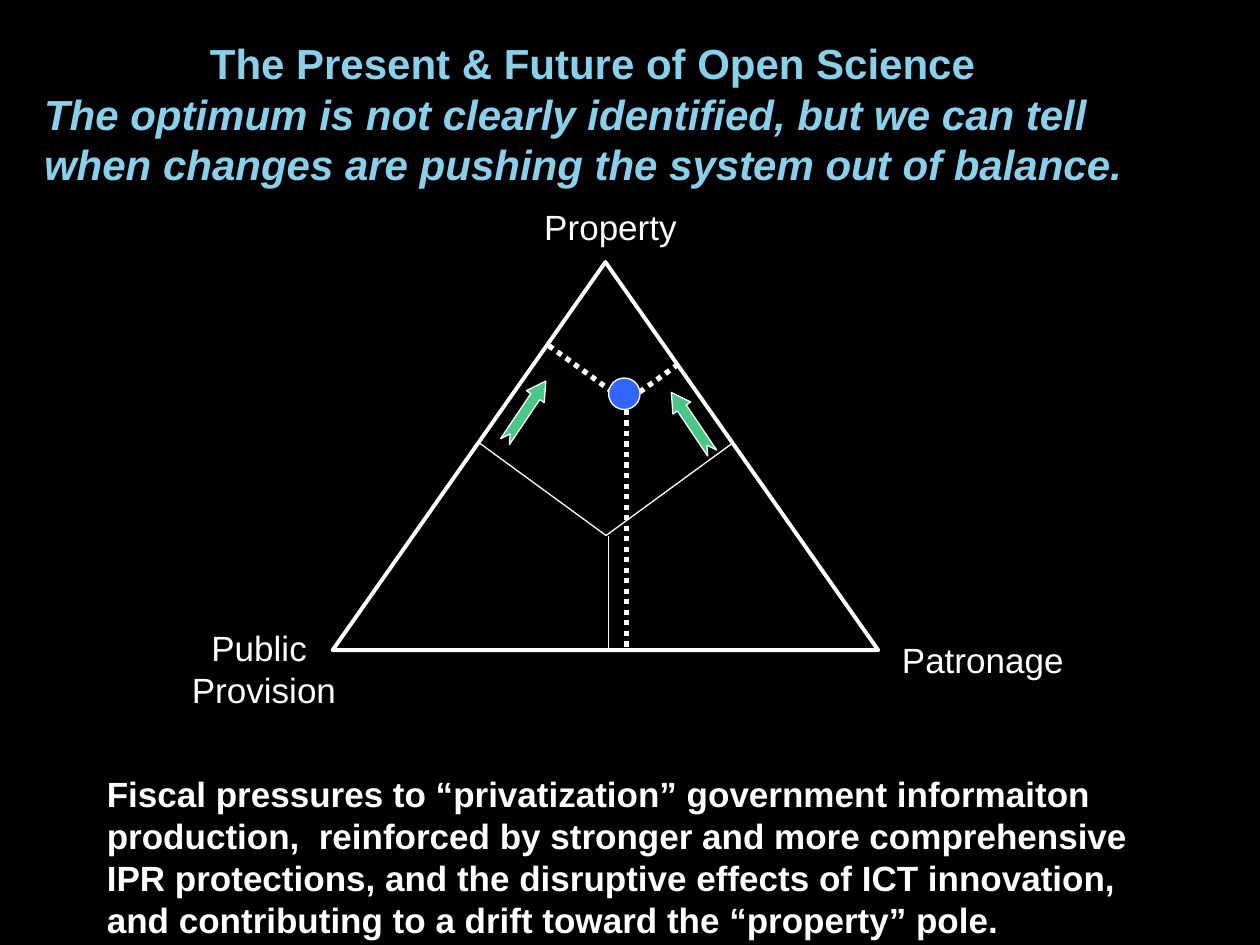
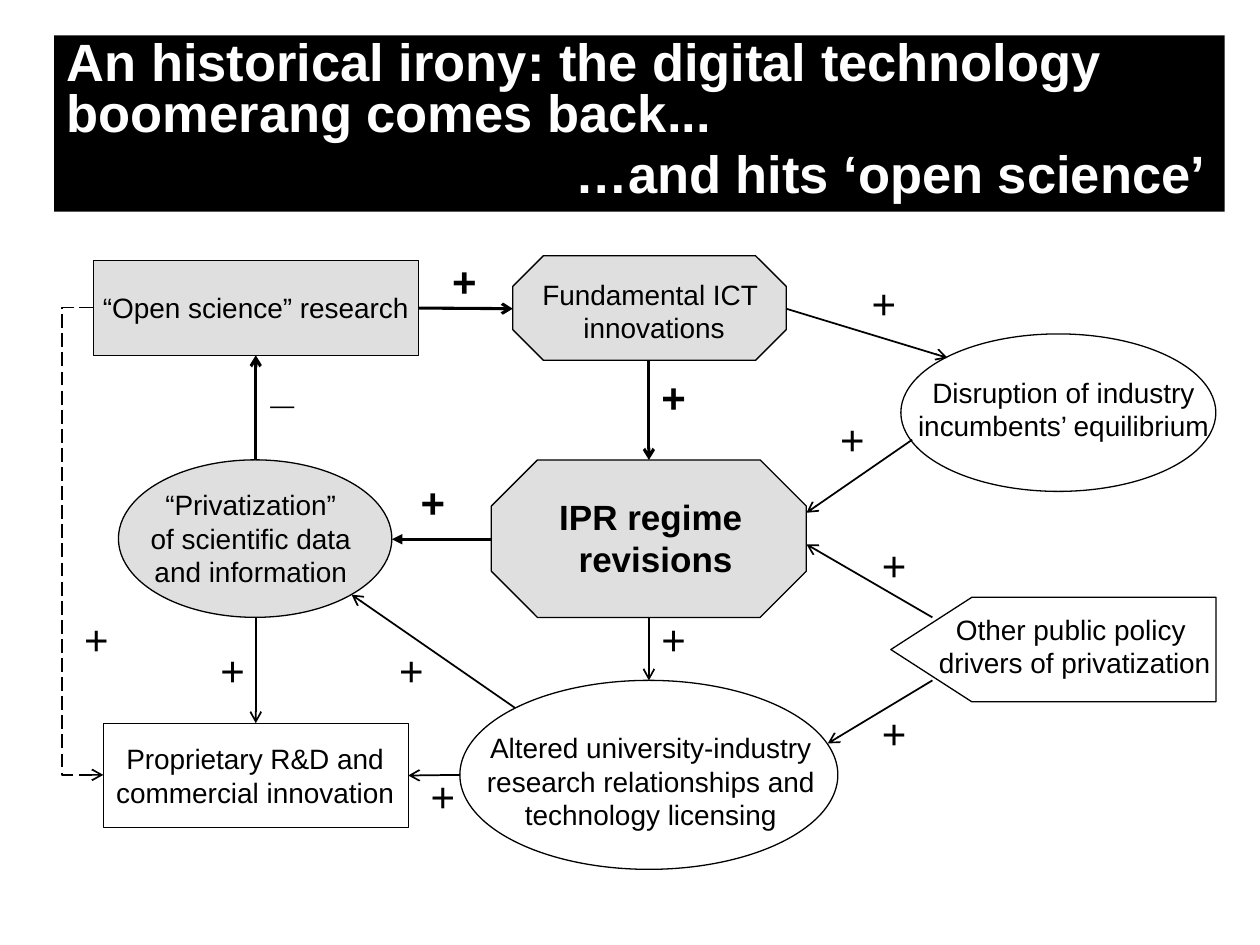
from lxml import etree
from pptx import Presentation
from pptx.dml.color import RGBColor
from pptx.enum.dml import MSO_LINE
from pptx.enum.shapes import MSO_CONNECTOR, MSO_SHAPE
from pptx.enum.text import MSO_ANCHOR, MSO_AUTO_SIZE, PP_ALIGN
from pptx.oxml.ns import qn
from pptx.util import Inches, Pt

# Slide size and its grid: 10 columns by 7.5 rows
WIDTH, HEIGHT = Inches(10), Inches(7.5)
COLUMN, ROW = WIDTH / 10, HEIGHT / 7.5
TITLE_ONLY = 5

COLORS = {
    "black": "000000", "white": "FFFFFF", "sky": "86D1EC",
    "green": "45C984", "blue": "3366FF", "gray": "C0C0C0",
}
FONT = "Arial"
LEFT, CENTER, RIGHT = PP_ALIGN.LEFT, PP_ALIGN.CENTER, PP_ALIGN.RIGHT
TOP = MSO_ANCHOR.TOP
FIXED, GROW = MSO_AUTO_SIZE.NONE, MSO_AUTO_SIZE.SHAPE_TO_FIT_TEXT
STRAIGHT, ELBOW = MSO_CONNECTOR.STRAIGHT, MSO_CONNECTOR.ELBOW
DOTTED, DASHED = MSO_LINE.ROUND_DOT, MSO_LINE.LONG_DASH
RECTANGLE, OCTAGON, ELLIPSE = MSO_SHAPE.RECTANGLE, MSO_SHAPE.OCTAGON, MSO_SHAPE.OVAL
PENTAGON, ARROW = MSO_SHAPE.PENTAGON, MSO_SHAPE.NOTCHED_RIGHT_ARROW
TRIANGLE = MSO_SHAPE.FLOWCHART_EXTRACT
SIDE_TOP, SIDE_RIGHT, SIDE_BOTTOM = 0, 3, 2
THIN, MEDIUM, BOLD = 0.75, 1, 1.75
# Centred captions keep slim side margins so that every line fits its box
SLIM_MARGINS = {"margin_left": Inches(0.05), "margin_right": Inches(0.05)}


def color(name):
    return RGBColor.from_string(COLORS[name])


def on_grid(*cells):
    """Turn alternating columns and rows into slide lengths."""
    return [round(cell * (ROW if index % 2 else COLUMN))
            for index, cell in enumerate(cells)]


def set_values(target, values):
    for name, value in values.items():
        setattr(target, name, value)


def add_slide(presentation, background):
    slide = presentation.slides.add_slide(presentation.slide_layouts[TITLE_ONLY])
    slide.background.fill.solid()
    slide.background.fill.fore_color.rgb = color(background)
    return slide


def write_lines(shape, lines, ink, size, bold=False, wrap=False, fit=GROW):
    """Write (text, paragraph values, font values) as one paragraph each."""
    frame = shape.text_frame
    set_values(frame, {"word_wrap": wrap, "auto_size": fit, "vertical_anchor": TOP})
    for index, (text, layout, style) in enumerate(lines):
        paragraph = frame.add_paragraph() if index else frame.paragraphs[0]
        set_values(paragraph, layout)
        run = paragraph.add_run()
        run.text = text
        set_values(run.font, {"name": FONT, "size": Pt(size), "bold": bold, **style})
        run.font.color.rgb = color(ink)


def set_title(slide, box, lines, ink, size):
    title = slide.shapes.title
    set_values(title, dict(zip(("left", "top", "width", "height"), on_grid(*box))))
    write_lines(title, lines, ink, size, bold=True, wrap=True, fit=FIXED)
    return title


def add_caption(slide, box, lines, ink, size, align=CENTER, **options):
    caption = slide.shapes.add_textbox(*on_grid(*box))
    if align == CENTER:
        set_values(caption.text_frame, SLIM_MARGINS)
    rows = [(line, {"alignment": align}, {}) for line in lines]
    write_lines(caption, rows, ink, size, **options)


def add_figure(slide, kind, box, line, fill=None, weight=THIN, adjust=(),
               rotation=0, alpha=None):
    figure = slide.shapes.add_shape(kind, *on_grid(*box))
    figure.shadow.inherit = False
    figure.rotation = rotation
    for index, value in enumerate(adjust):
        figure.adjustments[index] = value
    figure.line.width = Pt(weight)
    figure.line.color.rgb = color(line)
    if fill is None:
        figure.fill.background()
        return figure
    figure.fill.solid()
    figure.fill.fore_color.rgb = color(fill)
    if alpha:
        tint = figure.element.spPr.find(qn("a:solidFill"))[0]
        etree.SubElement(tint, qn("a:alpha"), val=str(alpha * 1000))
    return figure


def add_line(slide, ends, ink, weight, kind=STRAIGHT, dash=None, head=None,
             start=None, finish=None):
    """Draw a line; start and finish are (shape, side) joints."""
    line = slide.shapes.add_connector(kind, *on_grid(*ends))
    if start:
        line.begin_connect(*start)
    if finish:
        line.end_connect(*finish)
    line.line.width = Pt(weight)
    line.line.color.rgb = color(ink)
    if dash:
        line.line.dash_style = dash
    properties = line.element.spPr
    if head:
        etree.SubElement(properties.find(qn("a:ln")), qn("a:tailEnd"), type=head)
    etree.SubElement(properties, qn("a:effectLst"))
    return line


def bend(line, share):
    """Set the elbow's turn as a share of the connector's width."""
    guides = line.element.spPr.find(qn("a:prstGeom")).get_or_add_avLst()
    etree.SubElement(guides, qn("a:gd"), name="adj1", fmla=f"val {round(share * 100000)}")


def build_balance_slide(presentation):
    slide = add_slide(presentation, "black")
    set_title(slide, (0.25, 0.25, 9, 1.31), [
        ("The Present & Future of Open Science ", {"alignment": CENTER}, {}),
        ("The optimum is not clearly identified, but we can tell when changes "
         "are pushing the system out of balance.",
         {"alignment": LEFT}, {"italic": True}),
    ], "sky", 24)

    # Drift arrows and triangle
    for box, rotation in (((3.88, 3.18, 0.58, 0.17), 304), ((5.2, 3.27, 0.58, 0.17), 236)):
        add_figure(slide, ARROW, box, "white", "green", adjust=(0.5, 0.875), rotation=rotation)
    add_figure(slide, TRIANGLE, (2.64, 2.08, 4.33, 3.08), "white", weight=2.25)

    # Balanced centre, then the displaced one
    for ends in ((4.83, 4.25, 4.83, 5.17), (4.81, 4.25, 5.81, 3.52), (4.81, 4.25, 3.81, 3.52)):
        add_line(slide, ends, "white", THIN)
    for ends in ((5.01, 3.16, 5.37, 2.9), (4.93, 3.16, 4.35, 2.74), (4.97, 3.17, 4.97, 5.17)):
        add_line(slide, ends, "white", 3, dash=DOTTED)
    add_figure(slide, ELLIPSE, (4.83, 3, 0.25, 0.25), "white", "blue")

    # Poles
    for box, lines in (
        ((4.22, 1.58, 1.25, 0.43), ["Property"]),
        ((7.06, 5.02, 1.48, 0.43), ["Patronage"]),
        ((1.42, 4.92, 1.35, 0.77), ["Public ", "Provision"]),
    ):
        add_caption(slide, box, lines, "white", 20)

    add_caption(slide, (0.75, 6.08, 8.5, 1.43), [
        "Fiscal pressures to “privatization” government informaiton production,  "
        "reinforced by stronger and more comprehensive IPR protections, and the "
        "disruptive effects of ICT innovation, and contributing to a drift toward "
        "the “property” pole."], "white", 20, align=LEFT, bold=True, wrap=True)


def build_boomerang_slide(presentation):
    slide = add_slide(presentation, "white")
    spacing = {"line_spacing": 0.8, "space_before": Pt(6)}
    title = set_title(slide, (0.43, 0.28, 9.29, 1.4), [
        ("An historical irony: the digital technology boomerang comes back...",
         {"alignment": LEFT, **spacing}, {}),
        ("…and hits ‘open science’", {"alignment": RIGHT, **spacing}, {}),
    ], "white", 30)
    title.fill.solid()
    title.fill.fore_color.rgb = color("black")
    title.text_frame.margin_right = Inches(0.15)

    # Nodes: shaded ones form the main loop
    shaded = {"fill": "gray", "alpha": 50}
    cut = {"adjust": (0.293,), **shaded}
    nodes = {
        "ict": (OCTAGON, (4.07, 2.03, 2.17, 0.83), cut),
        "ipr": (OCTAGON, (3.9, 3.65, 2.5, 1.25), cut),
        "privatization": (ELLIPSE, (0.94, 3.65, 2.17, 1.25), shaded),
        "science": (RECTANGLE, (0.74, 2.07, 2.58, 0.75), shaded),
        "proprietary": (RECTANGLE, (0.82, 5.74, 2.42, 0.83), {}),
        "university": (ELLIPSE, (3.65, 5.4, 3, 1.5), {}),
        "policy": (PENTAGON, (7.07, 4.74, 2.58, 0.83), {"adjust": (0.775,), "rotation": 180}),
        "disruption": (ELLIPSE, (7.15, 2.65, 2.5, 1.25), {}),
    }
    shapes = {name: add_figure(slide, kind, box, "black", **options)
              for name, (kind, box, options) in nodes.items()}

    # Node captions
    for box, lines in (
        ((1.09, 3.82, 1.8, 0.9), ["“Privatization”", "of scientific data", "and information"]),
        ((7.18, 2.93, 2.52, 0.64), ["Disruption of industry", "incumbents’ equilibrium"]),
        ((0.71, 2.26, 2.64, 0.37), ["“Open science” research"]),
        ((0.82, 5.84, 2.41, 0.64), ["Proprietary R&D and", "commercial innovation"]),
        ((3.76, 5.75, 2.81, 0.9), ["Altered university-industry", "research relationships and",
                                   "technology licensing"]),
        ((7.35, 4.81, 2.36, 0.64), ["Other public policy ", "drivers of privatization"]),
        ((4.2, 2.15, 1.92, 0.64), ["Fundamental ICT", " innovations"]),
    ):
        add_caption(slide, box, lines, "black", 16)
    add_caption(slide, (4.34, 3.88, 1.65, 0.77), ["IPR regime", " revisions"],
                "black", 20, bold=True)

    # Influences
    science, proprietary = shapes["science"], shapes["proprietary"]
    for ends, weight, joints in (
        ((5.15, 2.86, 5.15, 3.65), BOLD, {}),
        ((5.15, 4.9, 5.15, 5.4), MEDIUM, {}),
        ((4.09, 5.62, 2.79, 4.72), MEDIUM, {}),
        ((6.24, 2.45, 7.52, 2.84), MEDIUM, {}),
        ((3.65, 6.15, 3.24, 6.15), MEDIUM, {"finish": (proprietary, SIDE_RIGHT)}),
        ((2.03, 4.9, 2.03, 5.74), MEDIUM, {"finish": (proprietary, SIDE_TOP)}),
        ((2.03, 3.65, 2.03, 2.82), BOLD, {"finish": (science, SIDE_BOTTOM)}),
        ((3.32, 2.44, 4.07, 2.45), BOLD, {"start": (science, SIDE_RIGHT)}),
        ((7.4, 5.4, 6.57, 5.9), MEDIUM, {}),
        ((7.4, 4.9, 6.4, 4.32), MEDIUM, {}),
        ((7.24, 3.49, 6.4, 4.07), MEDIUM, {}),
    ):
        add_line(slide, ends, "black", weight, head="arrow", **joints)
    add_line(slide, (3.9, 4.28, 3.11, 4.28), "black", BOLD, head="triangle")
    feedback = add_line(slide, (0.74, 2.44, 0.82, 6.15), "black", MEDIUM,
                        kind=ELBOW, dash=DASHED, head="arrow")
    bend(feedback, -3.12)

    # Signs of the influences
    plain = ((6.9, 5.57), (6.9, 4.23), (6.57, 3.23), (6.82, 2.15), (5.15, 4.82),
             (3.32, 6.07), (3.07, 5.07), (1.65, 5.07), (0.57, 4.82))
    strong = ((5.15, 2.9), (3.49, 1.98), (3.24, 3.73))
    for places, sign, bold in ((plain, "+", False), (strong, "+", True),
                               (((2.05, 2.82),), "_", True)):
        for place in places:
            add_caption(slide, (*place, 0.4, 0.5), [sign], "black", 24, align=LEFT, bold=bold)


def main():
    presentation = Presentation()
    presentation.slide_width, presentation.slide_height = WIDTH, HEIGHT
    build_balance_slide(presentation)
    build_boomerang_slide(presentation)
    presentation.save("out.pptx")


if __name__ == "__main__":
    main()
